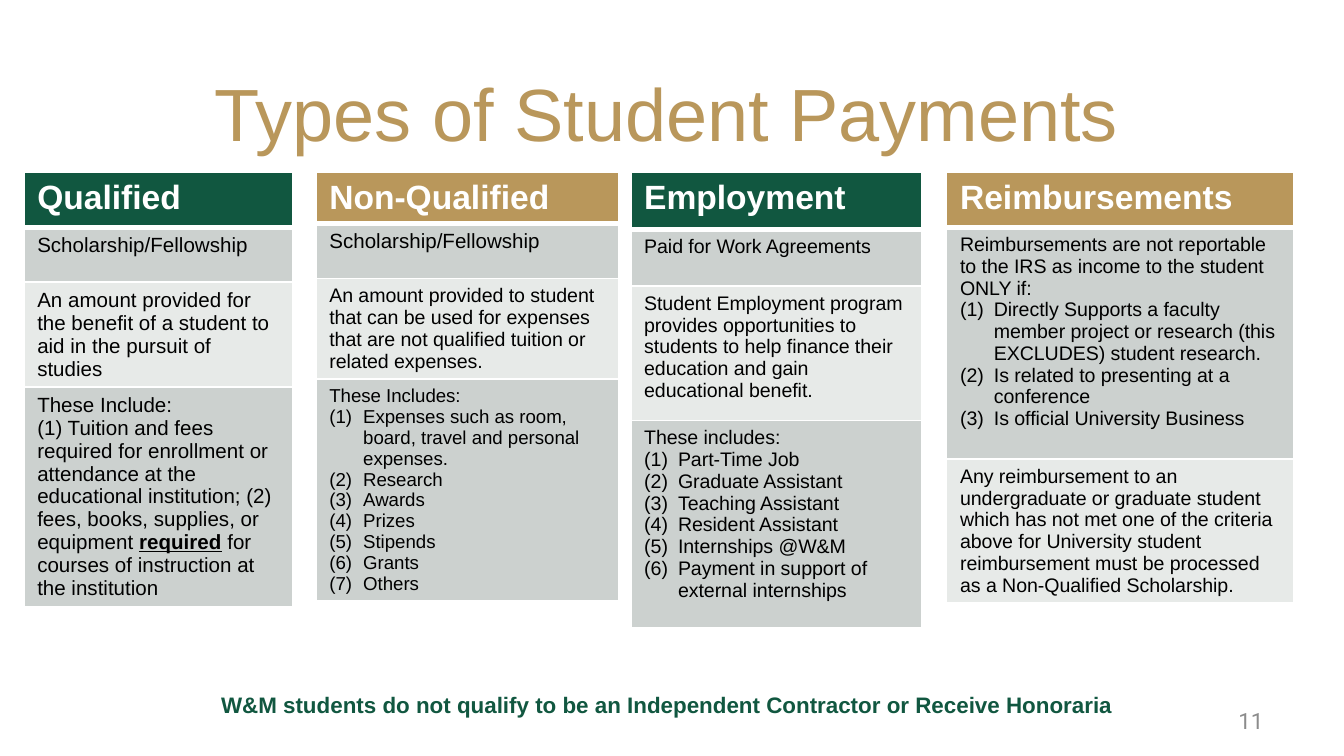
from dataclasses import dataclass

from lxml import etree
from pptx import Presentation
from pptx import util as u
from pptx.dml.color import RGBColor
from pptx.enum import text as t
from pptx.oxml import ns

HUES = {"green": "115740", "gold": "B9975B", "dark": "CCD1CF", "light": "E7EAE8",
        "white": "FFFFFF", "black": "000000", "grey": "8C8C8C"}


@dataclass
class Band:
    """One body row; text between asterisks is bold and underlined."""
    high: float
    size: float
    lead: str
    more: str = ""
    items: tuple[str, ...] = ()


@dataclass
class Card:
    left: float
    top: float
    wide: float
    head: str
    hue: str
    high: float
    bands: tuple[Band, ...]


CARDS = (
    Card(0.45, 3.25, 5.08, "Qualified", "green", 1.04, (
        Band(1.04, 11, "Scholarship/Fellowship"),
        Band(1.98, 11, "An amount provided for the benefit of a student to aid in the pursuit of studies"),
        Band(4.14, 11, "These Include:",
             "(1) Tuition and fees required for enrollment or attendance at the educational "
             "institution; (2) fees, books, supplies, or equipment *required* for courses of "
             "instruction at the institution"))),
    Card(5.97, 3.25, 5.72, "Non-Qualified", "gold", 0.97, (
        Band(1.04, 11, "Scholarship/Fellowship"),
        Band(1.9, 10.5, "An amount provided to student that can be used for expenses that are "
             "not qualified tuition or related expenses."),
        Band(4.19, 10, "These Includes:", items=(
            "Expenses such as room, board, travel and personal expenses.", "Research",
            "Awards", "Prizes", "Stipends", "Grants", "Others")))),
    Card(11.92, 3.26, 5.5, "Employment", "green", 1.07, (
        Band(1.07, 10.5, "Paid for Work Agreements"),
        Band(2.54, 10.5, "Student Employment program provides opportunities to students to help "
             "finance their education and gain educational benefit."),
        Band(3.91, 10.5, "These includes:", items=(
            "Part-Time Job", "Graduate Assistant", "Teaching Assistant", "Resident Assistant",
            "Internships @W&M", "Payment in support of external internships")))),
    Card(17.89, 3.26, 6.57, "Reimbursements", "gold", 1.03, (
        Band(4.38, 10.5, "Reimbursements are not reportable to the IRS as income to the student "
             "ONLY if:", items=(
                 "Directly Supports a faculty member project or research (this EXCLUDES) "
                 "student research.",
                 "Is related to presenting at a conference", "Is official University Business")),
        Band(2.72, 10.5, "Any reimbursement to an undergraduate or graduate student which has not "
             "met one of the criteria above for University student reimbursement must be "
             "processed as a Non-Qualified Scholarship."))),
)


def write(para, words: str, size: float, hue: str, bold: bool = False, face: str = "Arial") -> None:
    for i, piece in enumerate(words.split("*")):
        run = para.add_run()
        run.text = piece
        font = run.font
        font.name, font.size = face, u.Pt(size)
        font.color.rgb = RGBColor.from_string(HUES[hue])
        font.bold = bold or i % 2 == 1
        font.underline = i % 2 == 1


def number(para) -> None:
    """Give the paragraph a hanging (1), (2), ... label."""
    props = para._p.get_or_add_pPr()
    props.set("marL", str(u.Cm(0.64)))
    props.set("indent", str(-u.Cm(0.64)))
    etree.SubElement(props, ns.qn("a:buAutoNum"), type="arabicParenBoth")


def edge(cell, tops: float, base: float) -> None:
    """Draw white borders, with the given top and bottom weights in points."""
    props = cell._tc.get_or_add_tcPr()
    for i, (side, wide) in enumerate((("L", 1), ("R", 1), ("T", tops), ("B", base))):
        line = etree.Element(ns.qn(f"a:ln{side}"), w=str(u.Pt(wide)))
        fill = etree.SubElement(line, ns.qn("a:solidFill"))
        etree.SubElement(fill, ns.qn("a:srgbClr"), val=HUES["white"])
        props.insert(i, line)


def paint(cell, hue: str) -> None:
    cell.fill.solid()
    cell.fill.fore_color.rgb = RGBColor.from_string(HUES[hue])


def draw(slide, card: Card) -> None:
    highs = [card.high] + [band.high for band in card.bands]
    grid = slide.shapes.add_table(len(highs), 1, u.Cm(card.left), u.Cm(card.top),
                                  u.Cm(card.wide), u.Cm(sum(highs))).table
    for row, high in zip(grid.rows, highs):
        row.height = u.Cm(high)
    head = grid.cell(0, 0)
    paint(head, card.hue)
    edge(head, 1, 3)
    write(head.text_frame.paragraphs[0], card.head, 18, "white", True)
    for i, band in enumerate(card.bands):
        cell = grid.cell(i + 1, 0)
        paint(cell, "light" if i % 2 else "dark")
        edge(cell, 1 if i else 3, 1)
        frame = cell.text_frame
        write(frame.paragraphs[0], band.lead, band.size, "black")
        if band.more:
            write(frame.add_paragraph(), band.more, band.size, "black")
        for item in band.items:
            para = frame.add_paragraph()
            number(para)
            write(para, item, band.size, "black")


def label(slide, left: float, top: float, wide: float, high: float):
    """Add a wrapping text box and return its frame."""
    frame = slide.shapes.add_textbox(u.Cm(left), u.Cm(top), u.Cm(wide), u.Cm(high)).text_frame
    frame.word_wrap = True
    return frame


def main() -> None:
    deck = Presentation()
    deck.slide_width, deck.slide_height = u.Cm(25.4), u.Cm(14.28)
    slide = deck.slides.add_slide(deck.slide_layouts[5])

    title = slide.shapes.title
    title.left, title.top = u.Cm(1.17), u.Cm(1.2)
    title.width, title.height = u.Cm(22.86), u.Cm(1.83)
    frame = title.text_frame
    frame.auto_size = t.MSO_AUTO_SIZE.NONE
    frame.vertical_anchor = t.MSO_ANCHOR.MIDDLE
    frame.paragraphs[0].alignment = t.PP_ALIGN.CENTER
    write(frame.paragraphs[0], "Types of Student Payments", 39.6, "gold")

    for card in CARDS:
        draw(slide, card)

    page = label(slide, 18.21, 13.23, 5.92, 0.76)
    page.vertical_anchor = t.MSO_ANCHOR.MIDDLE
    page.paragraphs[0].alignment = t.PP_ALIGN.RIGHT
    write(page.paragraphs[0], "11", 12, "grey", face="Roboto")

    note = label(slide, 2.13, 12.93, 20.96, 0.76)
    note.auto_size = t.MSO_AUTO_SIZE.SHAPE_TO_FIT_TEXT
    note.paragraphs[0].alignment = t.PP_ALIGN.CENTER
    write(note.paragraphs[0], "W&M students do not qualify to be an Independent Contractor "
          "or Receive Honoraria", 12, "green", True)

    deck.save("out.pptx")


if __name__ == "__main__":
    main()
